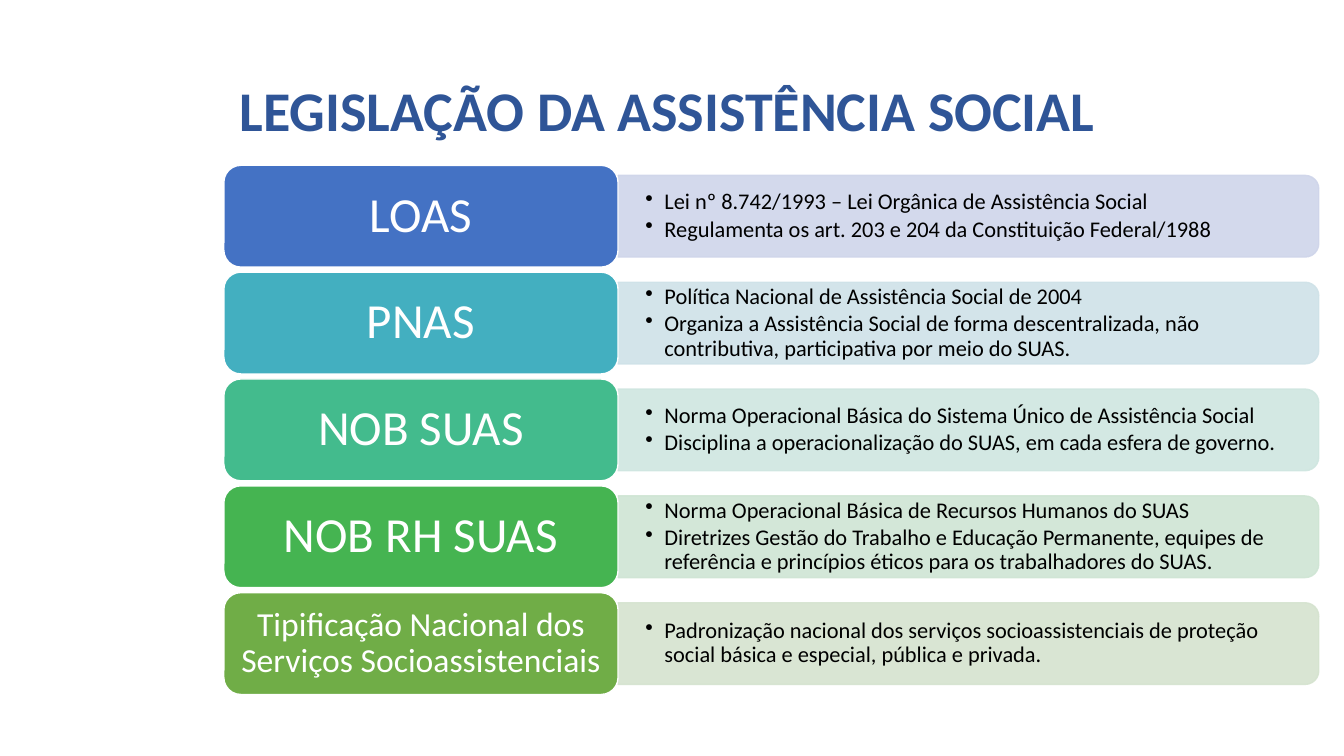
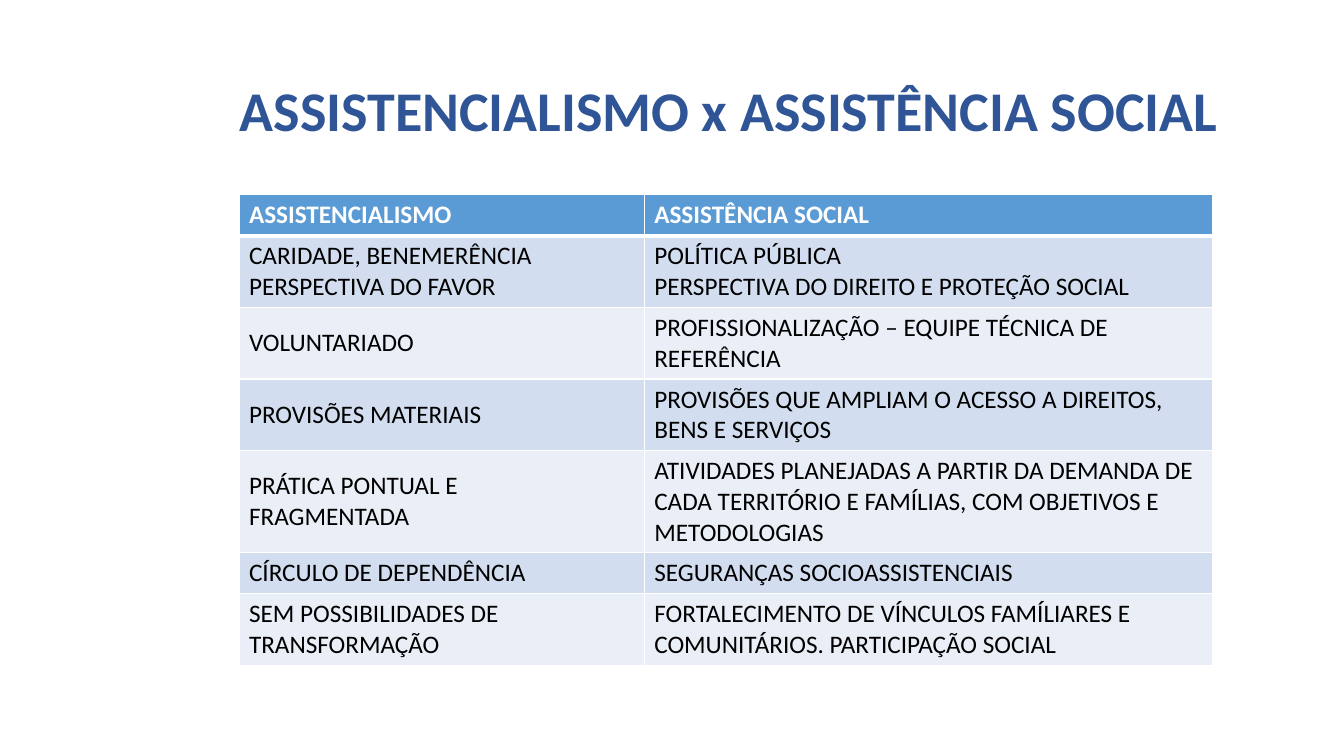
from lxml import etree
from pptx import Presentation
from pptx.dml.color import RGBColor
from pptx.enum.shapes import MSO_SHAPE as Shape
from pptx.enum.text import MSO_ANCHOR as Anchor, PP_ALIGN as Align
from pptx.oxml.ns import qn
from pptx.util import Inches, Pt

FONT = "Calibri"
COLORS = {
    "title": "2F5597", "text": "000000", "white": "FFFFFF",
    "header": "5B9BD5", "band_dark": "D2DEEF", "band_light": "EAEFF7",
}

# Content: label, label size, label colour, panel colour, bullets
LAWS_TITLE = "LEGISLAÇÃO DA ASSISTÊNCIA SOCIAL"
LAWS = [
    ("LOAS", 35, "4472C4", "CFD5EA", [
        "Lei nº 8.742/1993 – Lei Orgânica de Assistência Social",
        "Regulamenta os art. 203 e 204 da Constituição Federal/1988"]),
    ("PNAS", 35, "43AFC0", "CFE2E8", [
        "Política Nacional de Assistência Social de 2004",
        "Organiza a Assistência Social de forma descentralizada, não "
        "contributiva, participativa por meio do SUAS."]),
    ("NOB SUAS", 35, "43BB8D", "CFE6E0", [
        "Norma Operacional Básica do Sistema Único de Assistência Social",
        "Disciplina a operacionalização do SUAS, em cada esfera de governo."]),
    ("NOB RH SUAS", 35, "45B451", "CFE5D4", [
        "Norma Operacional Básica de Recursos Humanos do SUAS",
        "Diretrizes Gestão do Trabalho e Educação Permanente, equipes de "
        "referência e princípios éticos para os trabalhadores do SUAS."]),
    ("Tipificação Nacional dos Serviços Socioassistenciais", 24, "70AD47", "D5E3CF", [
        "Padronização nacional dos serviços socioassistenciais de proteção "
        "social básica e especial, pública e privada."]),
]

# Content: left paragraphs, right paragraphs, text lines in the row
CONTRAST_TITLE = "ASSISTENCIALISMO x ASSISTÊNCIA SOCIAL"
CONTRAST = [
    (["ASSISTENCIALISMO"], ["ASSISTÊNCIA SOCIAL"], 1),
    (["CARIDADE, BENEMERÊNCIA", "PERSPECTIVA DO FAVOR"],
     ["POLÍTICA PÚBLICA", "PERSPECTIVA DO DIREITO E PROTEÇÃO SOCIAL"], 2),
    (["VOLUNTARIADO"], ["PROFISSIONALIZAÇÃO – EQUIPE TÉCNICA DE REFERÊNCIA"], 2),
    (["PROVISÕES MATERIAIS"],
     ["PROVISÕES QUE AMPLIAM O ACESSO A DIREITOS, BENS E SERVIÇOS"], 2),
    (["PRÁTICA PONTUAL E", "FRAGMENTADA"],
     ["ATIVIDADES PLANEJADAS A PARTIR DA DEMANDA DE CADA TERRITÓRIO E "
      "FAMÍLIAS, COM OBJETIVOS E METODOLOGIAS"], 3),
    (["CÍRCULO DE DEPENDÊNCIA"], ["SEGURANÇAS SOCIOASSISTENCIAIS"], 1),
    (["SEM POSSIBILIDADES DE TRANSFORMAÇÃO"],
     ["FORTALECIMENTO DE VÍNCULOS FAMÍLIARES E COMUNITÁRIOS. "
      "PARTICIPAÇÃO SOCIAL"], 2),
]

# Layout, in inches
LABEL_LEFT, LABEL_TOP, LABEL_WIDTH, LABEL_HEIGHT, LABEL_STEP = 2.22, 1.64, 3.91, 1.01, 1.06
PANEL_WIDTH, PANEL_HEIGHT = 6.95, 0.81
BULLET_HEIGHT, BULLET_INDENT = 0.73, 0.19
TABLE_LEFT, TABLE_TOP, COLUMN_WIDTHS = 2.37, 1.93, (4.02, 5.64)
ROW_HEIGHT, EXTRA_LINE = 0.41, 0.3


def rgb(name):
    return RGBColor.from_string(COLORS.get(name, name))


def write(frame, lines, size, color, bold=False, bullets=False, **paragraph_format):
    frame.word_wrap = True
    for index, line in enumerate(lines):
        para = frame.paragraphs[0] if index == 0 else frame.add_paragraph()
        for key, value in paragraph_format.items():
            setattr(para, key, value)
        if bullets:
            props = para._p.get_or_add_pPr()
            props.set("marL", str(Inches(BULLET_INDENT)))
            props.set("indent", str(-Inches(BULLET_INDENT)))
            etree.SubElement(props, qn("a:buChar"), char="•")
        span = para.add_run()
        span.text = line
        for key, value in {"name": FONT, "size": Pt(size), "bold": bold}.items():
            setattr(span.font, key, value)
        span.font.color.rgb = rgb(color)


def set_margins(frame, side, edge):
    frame.margin_left = frame.margin_right = Inches(side)
    frame.margin_top = frame.margin_bottom = Inches(edge)


def add_text(page, left, top, width, height):
    box = page.shapes.add_textbox(*map(Inches, (left, top, width, height)))
    box.text_frame.vertical_anchor = Anchor.MIDDLE
    return box.text_frame


def add_block(page, preset, left, top, width, height, fill, line):
    block = page.shapes.add_shape(preset, *map(Inches, (left, top, width, height)))
    block.shadow.inherit = False
    block.fill.solid()
    block.fill.fore_color.rgb = rgb(fill)
    block.line.color.rgb = rgb(line)
    block.line.width = Pt(1)
    return block


def add_page(deck, title):
    page = deck.slides.add_slide(deck.slide_layouts[6])
    write(add_text(page, 2.28, 0.4, 11, 1.45), [title], 40, "title",
          bold=True, line_spacing=0.9)
    return page


def add_law(page, top, label, size, color, tint, bullets):
    middle = top + LABEL_HEIGHT / 2
    panel_left = LABEL_LEFT + LABEL_WIDTH

    # Panel: a quarter turn puts the rounded corners on the right
    panel = add_block(page, Shape.ROUND_2_SAME_RECTANGLE,
                      panel_left + (PANEL_WIDTH - PANEL_HEIGHT) / 2,
                      middle - PANEL_WIDTH / 2, PANEL_HEIGHT, PANEL_WIDTH, tint, tint)
    panel.rotation = 90
    for tone in panel._element.spPr.iter(qn("a:srgbClr")):
        etree.SubElement(tone, qn("a:alpha"), val="90000")

    # Bullets
    frame = add_text(page, panel_left, middle - BULLET_HEIGHT / 2, 6.91, BULLET_HEIGHT)
    set_margins(frame, 0.27, 0.14)
    write(frame, bullets, 16, "text", bullets=True, line_spacing=0.9, space_after=Pt(2.4))

    # Label
    block = add_block(page, Shape.ROUNDED_RECTANGLE, LABEL_LEFT, top,
                      LABEL_WIDTH, LABEL_HEIGHT, color, "white")
    set_margins(block.text_frame, 0.1, 0.05)
    block.text_frame.vertical_anchor = Anchor.MIDDLE
    write(block.text_frame, [label], size, "white", alignment=Align.CENTER, line_spacing=0.9)


def set_borders(cell, widths):
    props = cell._tc.get_or_add_tcPr()
    for side, width in widths.items():
        line = etree.SubElement(props, qn(f"a:ln{side}"), w=str(Pt(width)))
        fill = etree.SubElement(line, qn("a:solidFill"))
        etree.SubElement(fill, qn("a:srgbClr"), val=COLORS["white"])


def add_contrast(page):
    heights = [ROW_HEIGHT + EXTRA_LINE * (lines - 1) for *_, lines in CONTRAST]
    table = page.shapes.add_table(
        len(CONTRAST), len(COLUMN_WIDTHS), Inches(TABLE_LEFT), Inches(TABLE_TOP),
        Inches(sum(COLUMN_WIDTHS)), Inches(sum(heights))).table
    for column, width in zip(table.columns, COLUMN_WIDTHS):
        column.width = Inches(width)
    for r, (*texts, _) in enumerate(CONTRAST):
        table.rows[r].height = Inches(heights[r])
        header = r == 0
        band = "header" if header else "band_dark" if r % 2 else "band_light"
        for c, lines in enumerate(texts):
            cell = table.cell(r, c)
            set_borders(cell, {"L": 1, "R": 1, "T": 3 if r == 1 else 1, "B": 3 if header else 1})
            cell.fill.solid()
            cell.fill.fore_color.rgb = rgb(band)
            cell.vertical_anchor = Anchor.MIDDLE if c == 0 and not header else Anchor.TOP
            write(cell.text_frame, lines, 18, "white" if header else "text", bold=header)


def main():
    deck = Presentation()
    deck.slide_width, deck.slide_height = Inches(13.33), Inches(7.5)

    page = add_page(deck, LAWS_TITLE)
    for index, law in enumerate(LAWS):
        add_law(page, LABEL_TOP + index * LABEL_STEP, *law)

    add_contrast(add_page(deck, CONTRAST_TITLE))
    deck.save("out.pptx")


if __name__ == "__main__":
    main()
